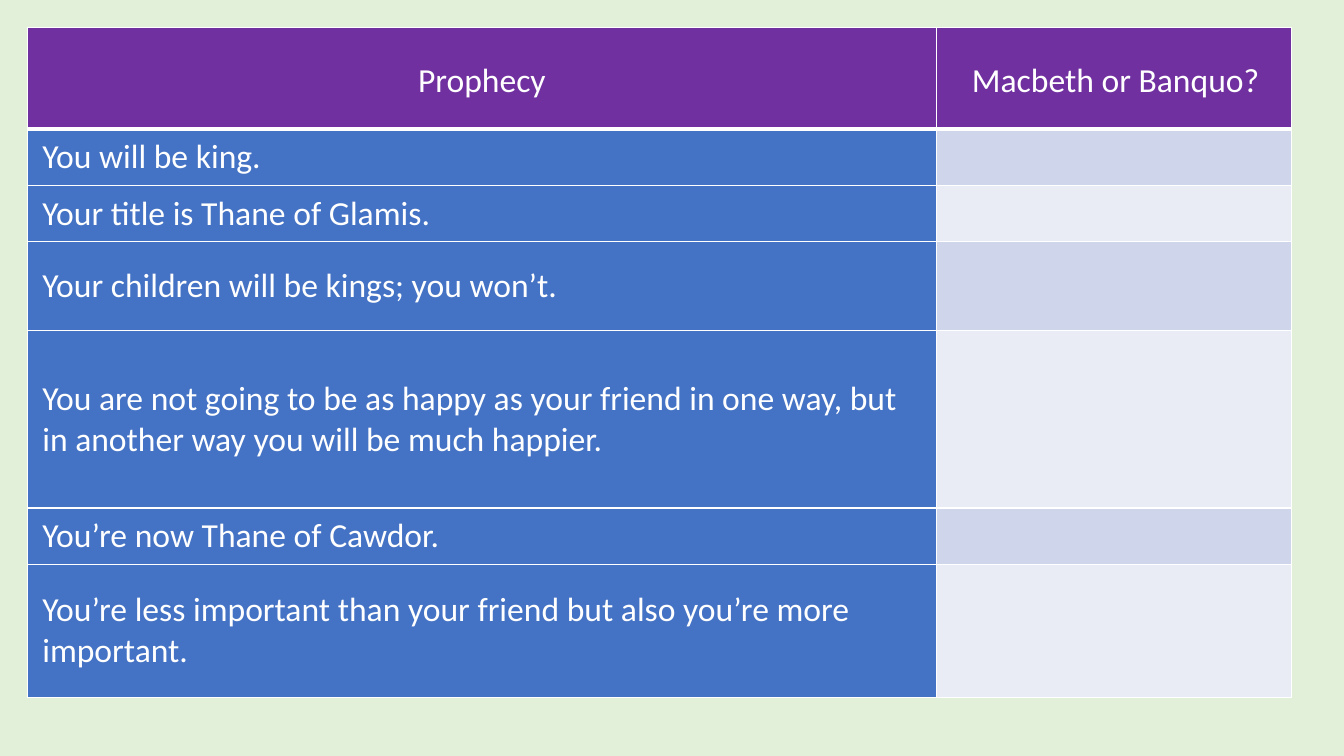
import pptx
import pptx.util
import pptx.dml.color
import pptx.enum.text
import pptx.oxml.ns
from lxml import etree

Inches, Pt = pptx.util.Inches, pptx.util.Pt
RGB = pptx.dml.color.RGBColor.from_string
Align = pptx.enum.text.PP_ALIGN
Anchor = pptx.enum.text.MSO_ANCHOR
qn = pptx.oxml.ns.qn

# Content: header, then each prophecy with its row height
HEADS = ["Prophecy", "Macbeth or Banquo?"]
ROWS = [
    ("You will be king.", 0.56),
    ("Your title is Thane of Glamis.", 0.56),
    ("Your children will be kings; you won’t.", 0.88),
    ("You are not going to be as happy as your friend in one way, "
     "but in another way you will be much happier.", 1.76),
    ("You’re now Thane of Cawdor.", 0.56),
    ("You’re less important than your friend but also you’re more important.", 1.32),
]
COLS = [9.02, 3.52]
HEAD_H = 1.01
LEFT = TOP = 0.27
COLORS = {"back": "E2F0D9", "head": "7030A0", "text": "FFFFFF", "line": "FFFFFF",
          "label": "4472C4", "odd": "CFD5EA", "even": "E9EBF5"}


def edge(cell, low=1):
    """Draw the four borders; low is the width of the bottom one."""
    props = cell._tc.get_or_add_tcPr()
    for tag, width in (("lnL", 1), ("lnR", 1), ("lnT", 1), ("lnB", low)):
        line = etree.SubElement(props, qn("a:" + tag), w=str(Pt(width)))
        fill = etree.SubElement(line, qn("a:solidFill"))
        etree.SubElement(fill, qn("a:srgbClr"), val=COLORS["line"])


def paint(cell, color, low=1):
    edge(cell, low)
    cell.fill.solid()
    cell.fill.fore_color.rgb = RGB(COLORS[color])


def write(cell, text, indent=0):
    cell.margin_left = cell.margin_right = Inches(0.07)
    cell.margin_top = cell.margin_bottom = 0
    cell.vertical_anchor = Anchor.MIDDLE
    cell.text_frame.text = text
    para = cell.text_frame.paragraphs[0]
    para._p.get_or_add_pPr().set("marL", str(Inches(indent)))
    font = para.runs[0].font
    font.name, font.size, font.bold = "Calibri", Pt(24), False
    font.color.rgb = RGB(COLORS["text"])
    return para


# Slide
deck = pptx.Presentation()
deck.slide_width, deck.slide_height = Inches(13.33), Inches(7.5)
slide = deck.slides.add_slide(deck.slide_layouts[6])
slide.background.fill.solid()
slide.background.fill.fore_color.rgb = RGB(COLORS["back"])

# Table grid
sizes = [HEAD_H] + [high for _, high in ROWS]
table = slide.shapes.add_table(
    len(sizes), len(COLS), Inches(LEFT), Inches(TOP),
    Inches(sum(COLS)), Inches(sum(sizes))).table
for col, wide in zip(table.columns, COLS):
    col.width = Inches(wide)
for row, high in zip(table.rows, sizes):
    row.height = Inches(high)

# Header row
for c, head in enumerate(HEADS):
    cell = table.cell(0, c)
    paint(cell, "head", low=3)
    para = write(cell, head, 0.03 * c)
    para.alignment = Align.CENTER
    para.line_spacing = 1.15

# Prophecies with blank answer cells
for r, (text, _) in enumerate(ROWS, 1):
    paint(table.cell(r, 0), "label")
    write(table.cell(r, 0), text, 0.08)
    paint(table.cell(r, 1), "odd" if r % 2 else "even")

deck.save("out.pptx")
